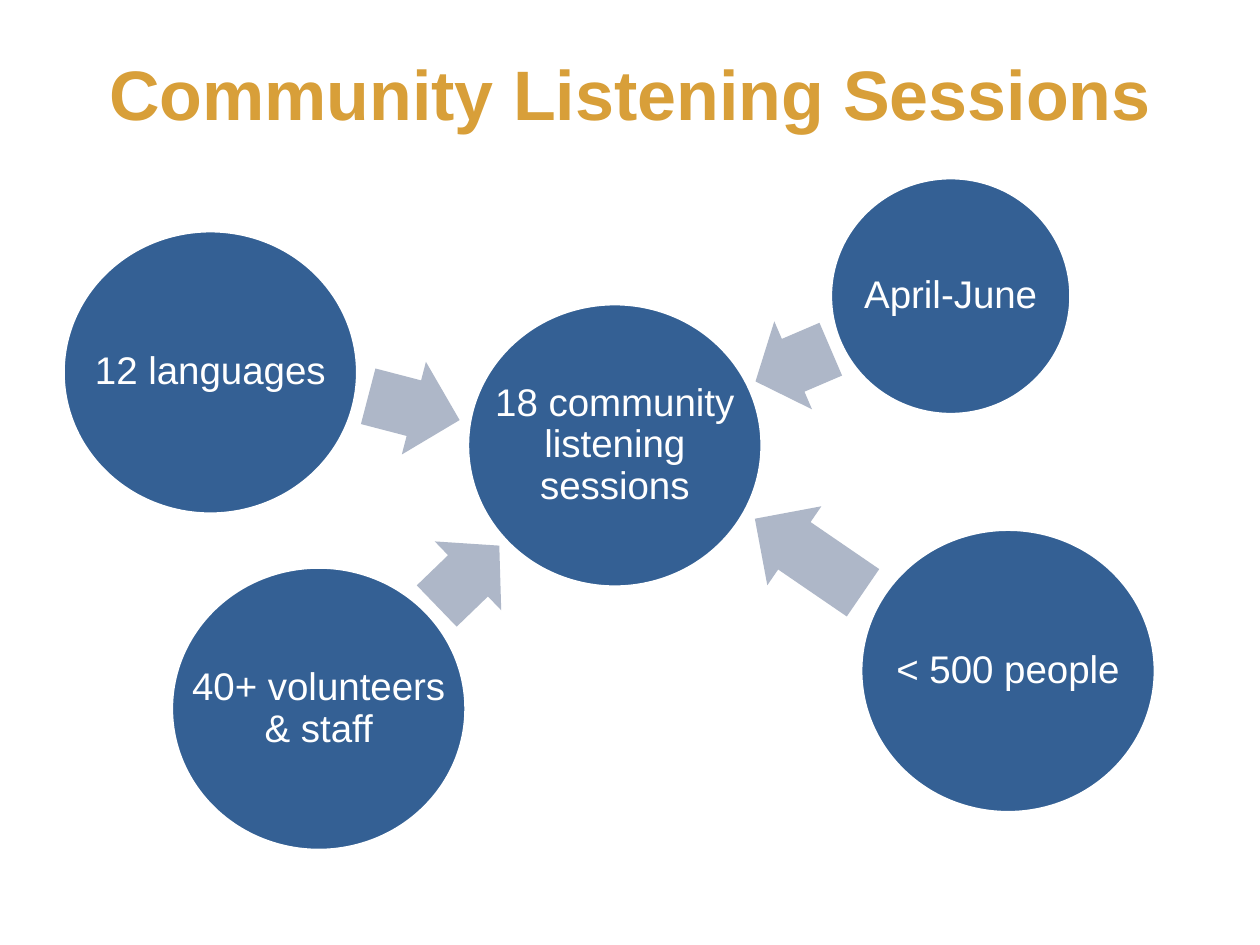
from dataclasses import dataclass

from pptx import Presentation
from pptx.dml.color import RGBColor
from pptx.enum.shapes import MSO_SHAPE
from pptx.enum.text import MSO_ANCHOR, PP_ALIGN
from pptx.util import Pt

GOLD = RGBColor(0xD8, 0x9F, 0x39)
BLUE = RGBColor(0x34, 0x60, 0x94)
GRAY = RGBColor(0xAE, 0xB7, 0xC8)
WHITE = RGBColor(0xFF, 0xFF, 0xFF)
FONT = "Arial"
HEAD = 54.7  # height of every arrow


@dataclass
class Disc:
    text: str
    left: float
    top: float
    wide: float = 168.4
    high: float = 162


@dataclass
class Arrow:
    left: float
    top: float
    wide: float
    turn: float


HUB = Disc("18 community listening sessions", 267.1, 173.5)
SPOKES = [
    (Arrow(429.8, 181.4, 46.8, 156.8),
     Disc("April-June", 474.5, 101.5, 137.5, 135.4)),
    (Arrow(424.8, 290.2, 74.9, 214.4), Disc("< 500 people", 491.8, 302.4)),
    (Arrow(242.6, 301.7, 49.7, 316), Disc("40+ volunteers & staff", 97.9, 324)),
    (Arrow(209.5, 205.9, 54, 14.6), Disc("12 languages", 36, 131.8)),
]


def add_text(slide, text: str, box: list, size: float, color: RGBColor,
             bold: bool = False):
    frame = slide.shapes.add_textbox(*box).text_frame
    frame.word_wrap = True
    para = frame.paragraphs[0]
    para.alignment = PP_ALIGN.CENTER
    run = para.add_run()
    run.text = text
    font = run.font
    font.name, font.size, font.bold = FONT, Pt(size), bold
    font.color.rgb = color
    return frame


def add_disc(slide, disc: Disc) -> None:
    box = [Pt(n) for n in (disc.left, disc.top, disc.wide, disc.high)]
    shape = slide.shapes.add_shape(MSO_SHAPE.OVAL, *box)
    shape.shadow.inherit = False
    shape.fill.solid()
    shape.fill.fore_color.rgb = BLUE
    shape.line.color.rgb = WHITE
    shape.line.width = Pt(2)
    frame = add_text(slide, disc.text, box, 22, WHITE)
    frame.vertical_anchor = MSO_ANCHOR.MIDDLE
    frame.margin_left = frame.margin_right = Pt(4)
    frame.margin_top = frame.margin_bottom = Pt(2)
    frame.paragraphs[0].line_spacing = 0.9


def add_arrow(slide, arrow: Arrow) -> None:
    box = [Pt(n) for n in (arrow.left, arrow.top, arrow.wide, HEAD)]
    shape = slide.shapes.add_shape(MSO_SHAPE.RIGHT_ARROW, *box)
    shape.shadow.inherit = False
    shape.adjustments[0] = 0.6
    shape.adjustments[1] = 0.5
    shape.rotation = arrow.turn
    shape.fill.solid()
    shape.fill.fore_color.rgb = GRAY
    shape.line.fill.background()


def main() -> None:
    deck = Presentation()
    deck.slide_width, deck.slide_height = Pt(720), Pt(540)
    slide = deck.slides.add_slide(deck.slide_layouts[6])
    box = [Pt(n) for n in (36, 21.6, 648, 90)]
    title = add_text(slide, "Community Listening Sessions", box, 40, GOLD, True)
    title.margin_top = Pt(7.2)
    add_disc(slide, HUB)
    for arrow, disc in SPOKES:
        add_arrow(slide, arrow)
        add_disc(slide, disc)
    deck.save("out.pptx")


if __name__ == "__main__":
    main()
